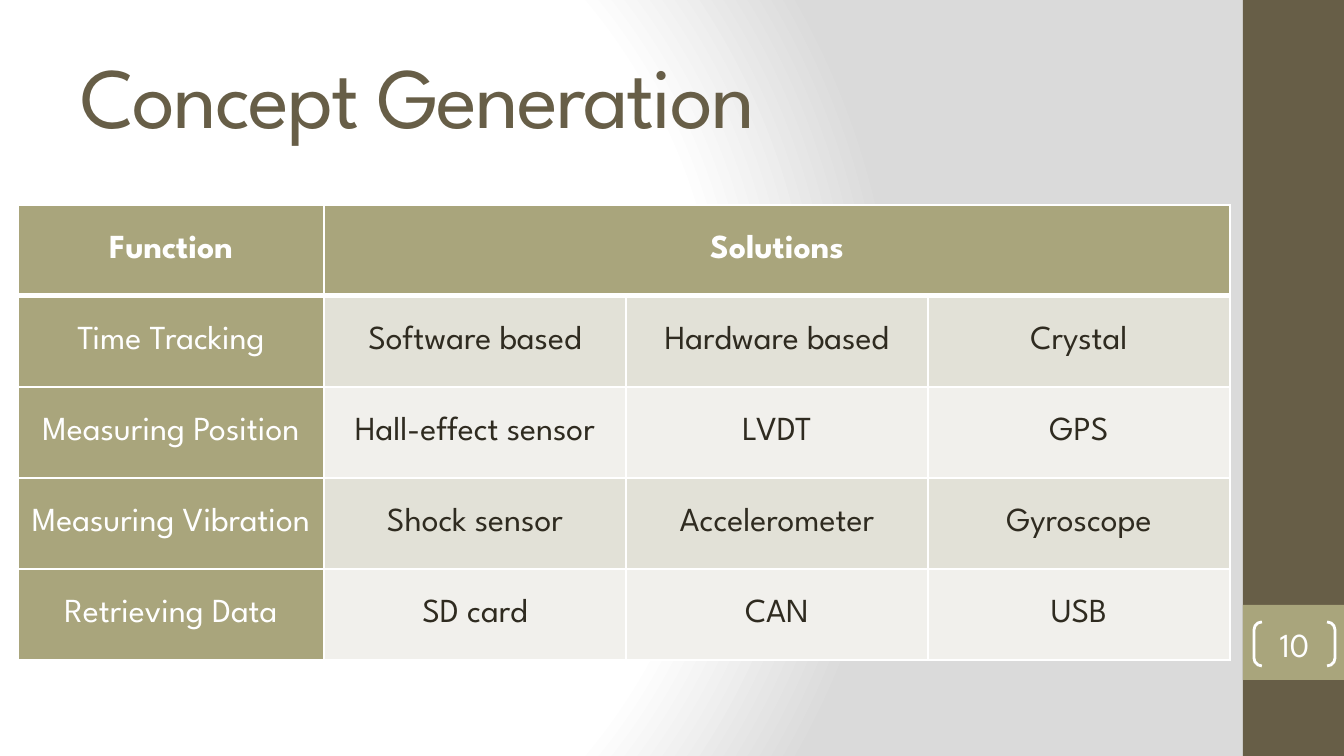
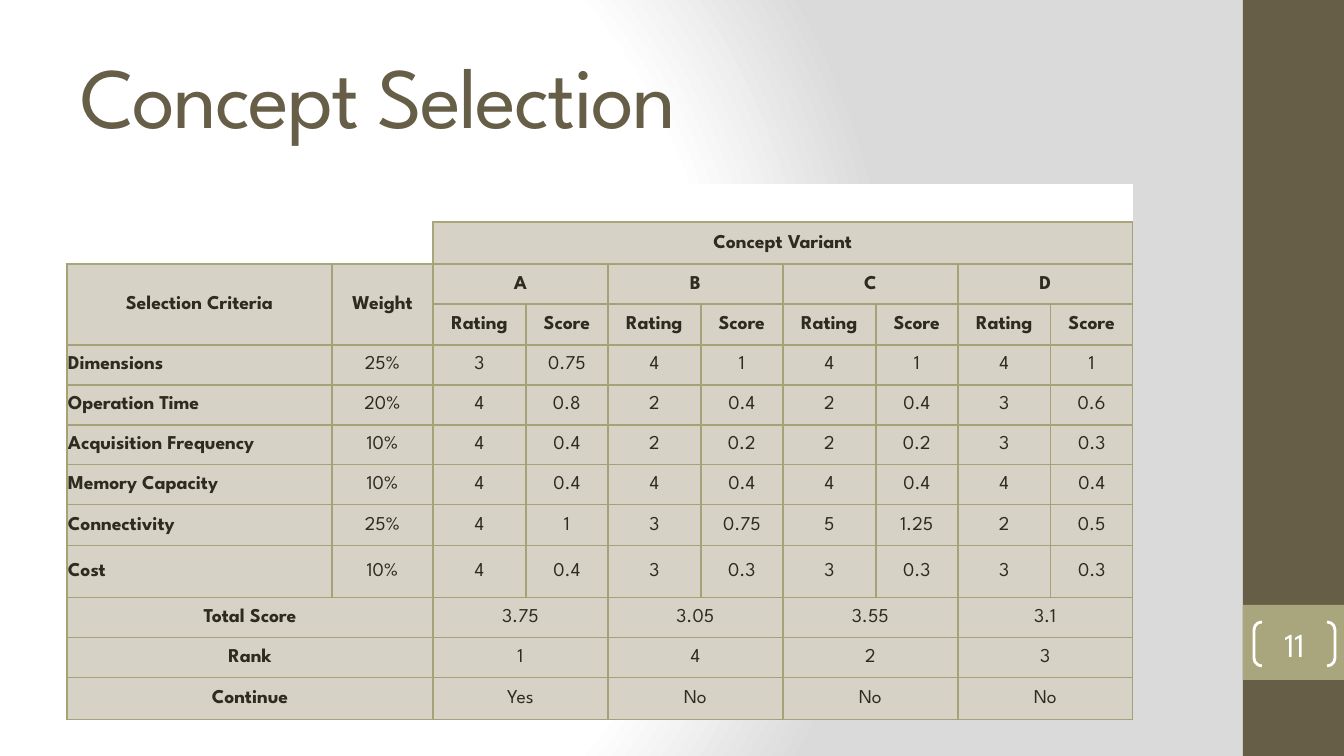
import lxml.etree
import pptx
import pptx.dml.color
import pptx.enum.shapes
import pptx.enum.text
import pptx.oxml.ns
import pptx.util

Pt = pptx.util.Pt
qn = pptx.oxml.ns.qn
Shape = pptx.enum.shapes.MSO_SHAPE
Align = pptx.enum.text.PP_ALIGN
MIDDLE = pptx.enum.text.MSO_ANCHOR.MIDDLE

WHITE, GREY, DARK = "FFFFFF", "DADADA", "2F2B20"
BROWN, OLIVE, MOSS = "675E47", "A9A57C", "A6A278"
BAND, PALE, SAND = "E2E1D7", "F1F0EC", "D6D3C6"
FONT = "League Spartan"


def px(n):
    return pptx.util.Emu(round(n * 9144000 / 1344))


def rgb(code):
    return pptx.dml.color.RGBColor.from_string(code)


def node(parent, tag, **attrs):
    return lxml.etree.SubElement(parent, qn(tag), **attrs)


class Deck:
    def __init__(self):
        self.prs = pptx.Presentation()
        self.prs.slide_width, self.prs.slide_height = px(1344), px(756)
        self.backdrop()

    def backdrop(self):
        """Round gradient on the master, shared by all slides."""
        master = self.prs.slide_master
        master.background.fill.gradient()
        grad = master.element.find(".//" + qn("a:gradFill"))
        for child in list(grad):
            grad.remove(child)
        stops = node(grad, "a:gsLst")
        for pos, code in ((0, WHITE), (75, WHITE), (100, GREY)):
            stop = node(stops, "a:gs", pos=str(pos * 1000))
            node(stop, "a:srgbClr", val=code)
        ring = node(grad, "a:path", path="circle")
        node(ring, "a:fillToRect", l="20000", t="50000", r="100000", b="50000")

    def page(self, title, number):
        """Start a slide with its side bands, title and number."""
        self.slide = self.prs.slides.add_slide(self.prs.slide_layouts[5])
        self.block(1243, 0, 101, 756, BROWN)
        self.block(1243, 605, 101, 75, OLIVE)
        self.title(title)
        self.number(number)

    def block(self, x, y, w, h, fill, kind=Shape.RECTANGLE):
        box = self.slide.shapes.add_shape(kind, px(x), px(y), px(w), px(h))
        box.shadow.inherit = False
        box.line.fill.background()
        if fill:
            box.fill.solid()
            box.fill.fore_color.rgb = rgb(fill)
        else:
            box.fill.background()
        return box

    def label(self, para, text, size, color, bold=False, align=Align.CENTER):
        para.alignment = align
        run = para.add_run()
        run.text = text
        font = run.font
        font.name, font.size, font.bold = FONT, Pt(size), bold
        font.color.rgb = rgb(color)

    def title(self, text):
        box = self.slide.shapes.title
        box.left, box.top, box.width, box.height = px(67), px(31), px(1120), px(126)
        frame = box.text_frame
        frame.auto_size = pptx.enum.text.MSO_AUTO_SIZE.NONE
        frame.vertical_anchor = MIDDLE
        self.label(frame.paragraphs[0], text, 46, BROWN, align=Align.LEFT)
        frame.paragraphs[0].runs[0]._r.get_or_add_rPr().set("spc", "-100")

    def number(self, value):
        box = self.block(1254, 622, 81, 44, None, Shape.DOUBLE_BRACKET)
        box.adjustments[0] = 0.18
        box.line.color.rgb = rgb(WHITE)
        box.line.width = Pt(1.5)
        frame = box.text_frame
        frame.margin_left = frame.margin_right = 0
        frame.margin_top = frame.margin_bottom = 0
        frame.vertical_anchor = MIDDLE
        self.label(frame.paragraphs[0], str(value), 18, WHITE)

    def table(self, x, y, cols, rows):
        shape = self.slide.shapes.add_table(
            len(rows), len(cols), px(x), px(y), px(sum(cols)), px(sum(rows)))
        grid = shape.table
        grid.first_row = grid.horz_banding = False
        for col, width in zip(grid.columns, cols):
            col.width = px(width)
        for row, height in zip(grid.rows, rows):
            row.height = px(height)
        return grid

    def cell(self, cell, text, size, color, fill, edges,
             bold=False, align=Align.CENTER, tight=False):
        """Style one cell; edges maps L, R, T, B to (colour, points)."""
        if tight:
            cell.margin_left = cell.margin_right = cell.margin_top = px(1)
            cell.margin_bottom = 0
        cell.vertical_anchor = MIDDLE
        props = cell._tc.get_or_add_tcPr()
        for side in "LRTB":
            code, width = edges.get(side, (None, 1))
            line = node(props, "a:ln" + side, w=str(Pt(width)))
            if code:
                node(node(line, "a:solidFill"), "a:srgbClr", val=code)
            else:
                node(line, "a:noFill")
        cell.fill.solid()
        cell.fill.fore_color.rgb = rgb(fill)
        para = cell.text_frame.paragraphs[0]
        if text:
            self.label(para, text, size, color, bold, align)
        else:
            para._p.get_or_add_endParaRPr().set("sz", str(int(size * 100)))


def generation(deck):
    deck.page("Concept Generation", 10)
    body = [
        ["Function", "Solutions", "", ""],
        ["Time Tracking", "Software based", "Hardware based", "Crystal"],
        ["Measuring Position", "Hall-effect sensor", "LVDT", "GPS"],
        ["Measuring Vibration", "Shock sensor", "Accelerometer", "Gyroscope"],
        ["Retrieving Data", "SD card", "CAN", "USB"],
    ]
    grid = deck.table(18, 205, [306] + [302] * 3, [91] * len(body))
    for r, line in enumerate(body):
        for c, text in enumerate(line):
            head = r == 0 or c == 0
            fill = OLIVE if head else BAND if r % 2 else PALE
            edges = dict.fromkeys("LRTB", (WHITE, 1))
            if r < 2:
                edges["T" if r else "B"] = (WHITE, 3)
            deck.cell(grid.cell(r, c), text, 18, WHITE if head else DARK,
                      fill, edges, bold=r == 0)
    grid.cell(0, 1).merge(grid.cell(0, 3))


def selection(deck):
    deck.page("Concept Selection", 11)

    def paired(values):
        return [text for value in values for text in (value, "")]

    # Criteria: name, weight, then rating and score of each variant
    marks = [
        ["Dimensions", "25%", "3", "0.75", "4", "1", "4", "1", "4", "1"],
        ["Operation Time", "20%", "4", "0.8", "2", "0.4", "2", "0.4", "3", "0.6"],
        ["Acquisition Frequency", "10%", "4", "0.4", "2", "0.2", "2", "0.2", "3", "0.3"],
        ["Memory Capacity", "10%", "4", "0.4", "4", "0.4", "4", "0.4", "4", "0.4"],
        ["Connectivity", "25%", "4", "1", "3", "0.75", "5", "1.25", "2", "0.5"],
        ["Cost", "10%", "4", "0.4", "3", "0.3", "3", "0.3", "3", "0.3"],
    ]
    body = [
        [""] * 10,
        ["", "", "Concept Variant"] + [""] * 7,
        ["Selection Criteria", "Weight"] + paired("ABCD"),
        ["", ""] + ["Rating", "Score"] * 4,
        *marks,
        paired(["Total Score", "3.75", "3.05", "3.55", "3.1"]),
        paired(["Rank", "1", "4", "2", "3"]),
        paired(["Continue", "Yes", "No", "No", "No"]),
    ]
    grid = deck.table(67, 184, [265, 101] + [93, 82] * 4,
                      [38, 42, 40, 41, 40, 40, 40, 40, 41, 52, 40, 40, 42])
    for r, line in enumerate(body):
        for c, text in enumerate(line):
            blank = r == 0 or (r == 1 and c < 2)
            edges = {} if blank else dict.fromkeys("LRTB", (MOSS, 1))
            if blank and (r == 1 or c > 1):
                edges["B"] = (OLIVE, 1)
            if (r, c) == (1, 1):
                edges["R"] = (OLIVE, 1)
            if (r, c) == (1, 2):
                edges["L"] = (OLIVE, 1)
            if (r == 1 and c > 1) or (r == 2 and c < 2):
                edges["T"] = (OLIVE, 1)
            deck.cell(grid.cell(r, c), text, 10.5, DARK,
                      WHITE if blank else SAND, edges,
                      bold=r < 4 or c == 0, tight=True,
                      align=Align.LEFT if c == 0 and 4 <= r < 10 else Align.CENTER)

    # Merged headings and totals
    grid.cell(1, 2).merge(grid.cell(1, 9))
    for c in (0, 1):
        grid.cell(2, c).merge(grid.cell(3, c))
    for r in (2, 10, 11, 12):
        for c in range(2 if r == 2 else 0, 10, 2):
            grid.cell(r, c).merge(grid.cell(r, c + 1))


def main():
    deck = Deck()
    generation(deck)
    selection(deck)
    deck.prs.save("out.pptx")


if __name__ == "__main__":
    main()
